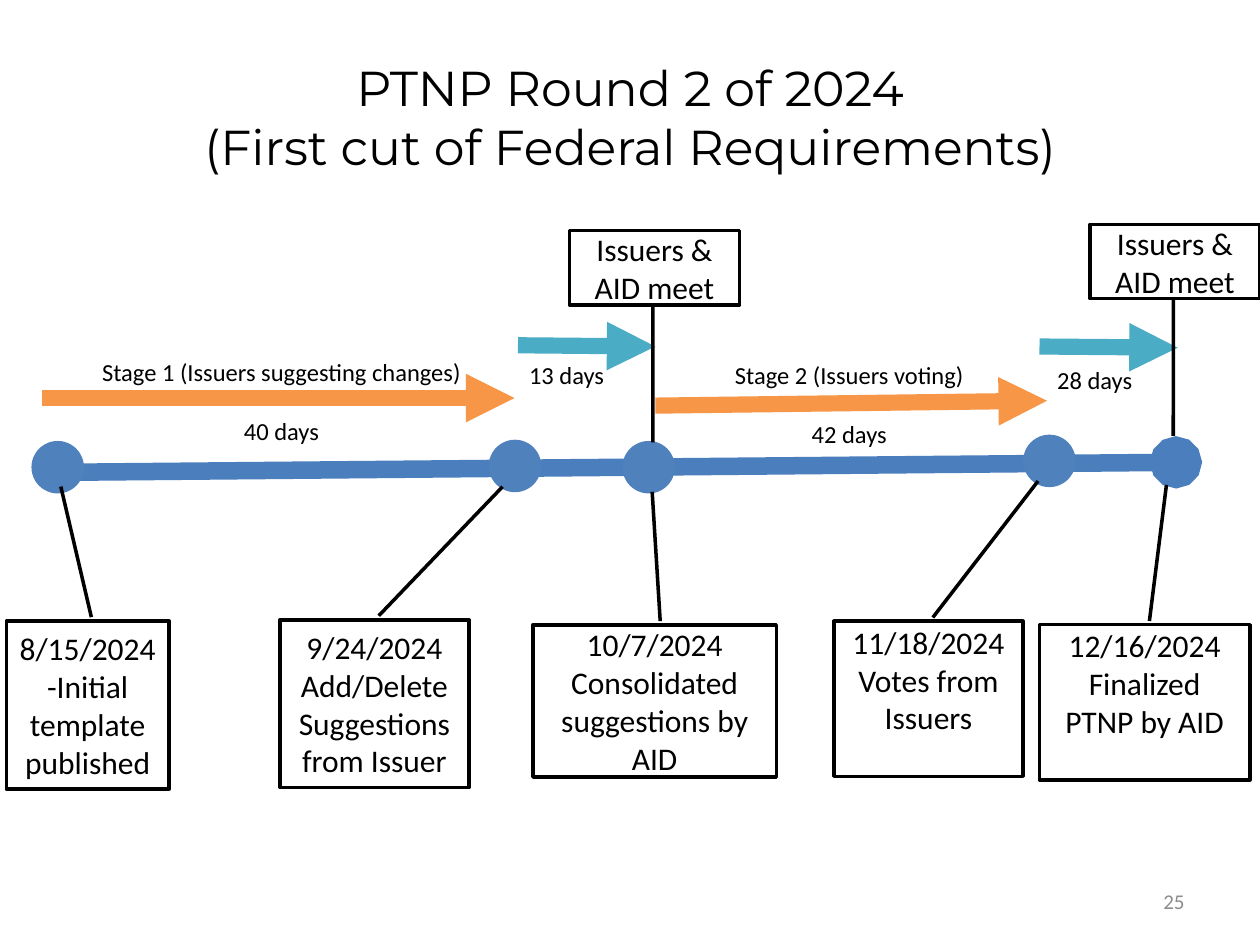
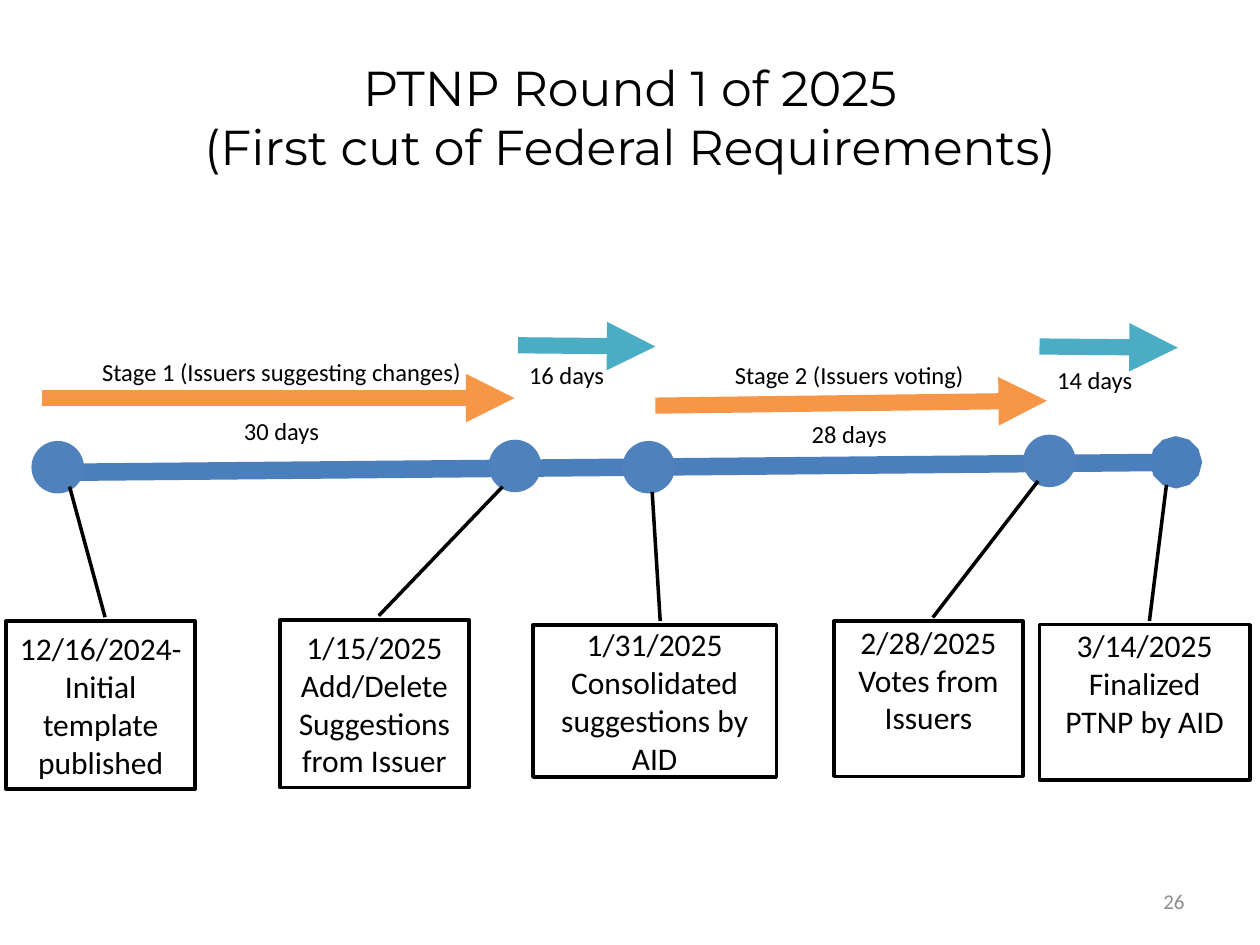
from lxml import etree
from pptx import Presentation
from pptx.dml.color import RGBColor
from pptx.enum import shapes, text
from pptx.oxml import ns
from pptx.util import Pt

BLACK = RGBColor(0x00, 0x00, 0x00)
WHITE = RGBColor(0xFF, 0xFF, 0xFF)
GRAY = RGBColor(0x8C, 0x8C, 0x8C)
AXIS_BLUE = RGBColor(0x4B, 0x7E, 0xBC)
DOT_BLUE = RGBColor(0x4F, 0x81, 0xBD)
ORANGE = RGBColor(0xF7, 0x96, 0x46)
TEAL = RGBColor(0x4B, 0xAC, 0xC6)
LEFT, CENTER, RIGHT = text.PP_ALIGN.LEFT, text.PP_ALIGN.CENTER, text.PP_ALIGN.RIGHT
DOT_SIZE = 30
BLANK_LINE = 22

# start x, start y, end x, end y, colour, width, end shape
LINES = [
    (24, 270, 672, 264.2, AXIS_BLUE, 10, "oval"),
    (24, 227.5, 294, 227.5, ORANGE, 9.25, "triangle"),
    (374.5, 231.8, 598.3, 229, ORANGE, 9.25, "triangle"),
    (296, 197.3, 374.5, 198, TEAL, 9.25, "triangle"),
    (594, 198, 673, 198.7, TEAL, 9.25, "triangle"),
]
DOTS = [(18, 252), (279.3, 251.3), (355.7, 252), (584.7, 248.4)]

# left, top, width, height, pointer end (y, x), event text, space kept below the text
EVENTS = [
    (3.6, 355, 93, 95.8, (-0.803, 0.335), "-Initial template published", 0),
    (160, 354.2, 108, 95.8, (-0.794, 1.178), "\nAdd/Delete Suggestions from Issuer", 0),
    (304.6, 357, 139, 87, (-0.873, 0.49), "\nConsolidated suggestions by AID", 0),
    (476.6, 355, 108, 88.6, (-0.904, 1.08), " Votes from Issuers", BLANK_LINE),
    (594, 357, 120.2, 88.6, (-0.902, 0.604), "\nFinalized PTNP by AID", BLANK_LINE),
]
MEETINGS = [(325.4, 131.8), (622.8, 128.2)]

# left, top, width, height, alignment, stage name
DURATIONS = [
    (44.6, 200.2, 232.6, 58.3, CENTER, "Stage 1 (Issuers suggesting changes)\n"),
    (295.2, 202.3, 73.4, 24.5, LEFT, ""),
    (386, 202.3, 198.7, 58.3, CENTER, "Stage 2 (Issuers voting)\n"),
    (597, 205.2, 73.4, 24.5, LEFT, ""),
]

# name, page number, dates, days, width of first event box, whether meetings show
ROUNDS = [
    ("PTNP Round 2 of 2024", 25,
     ["8/15/2024", "9/24/2024", "10/7/2024", "11/18/2024", "12/16/2024"],
     [40, 13, 42, 28], 93, True),
    ("PTNP Round 1 of 2025", 26,
     ["12/16/2024", "1/15/2025", "1/31/2025", "2/28/2025", "3/14/2025"],
     [30, 16, 28, 14], 108, False),
]


def write(shape, words, size, align=CENTER, color=BLACK, font="Calibri"):
    frame = shape.text_frame
    frame.text = words
    frame.word_wrap = True
    for para in frame.paragraphs:
        para.alignment = align
        for span in para.runs:
            span.font.size = Pt(size)
            span.font.name = font
            span.font.color.rgb = color
    return frame


def add_callout(page, left, top, width, height, pointer, words, space_below=0):
    """Add a bordered box; pointer holds start y, start x, end y, end x as box fractions."""
    box = page.shapes.add_shape(shapes.MSO_SHAPE.LINE_CALLOUT_1,
                                Pt(left), Pt(top), Pt(width), Pt(height))
    for index, value in enumerate(pointer):
        box.adjustments[index] = value
    box.shadow.inherit = False
    box.fill.solid()
    box.fill.fore_color.rgb = WHITE
    box.line.color.rgb = BLACK
    box.line.width = Pt(2)
    frame = write(box, words, 18)
    frame.vertical_anchor = text.MSO_ANCHOR.MIDDLE
    frame.margin_top, frame.margin_bottom = 0, Pt(space_below)


deck = Presentation()
deck.slide_width, deck.slide_height = Pt(720), Pt(540)

for name, number, dates, days, first_width, has_meetings in ROUNDS:
    page = deck.slides.add_slide(deck.slide_layouts.get_by_name("Title Only"))
    title = page.shapes.title
    title.left, title.top, title.width, title.height = Pt(36), Pt(21.6), Pt(648), Pt(90)
    write(title, name + "\v(First cut of Federal Requirements)", 28, font="Montserrat")

    footer = page.shapes.add_textbox(Pt(516), Pt(500.5), Pt(168), Pt(28.75))
    write(footer, str(number), 12, RIGHT, GRAY).vertical_anchor = text.MSO_ANCHOR.MIDDLE

    for x1, y1, x2, y2, color, width, end in LINES:
        arrow = page.shapes.add_connector(shapes.MSO_CONNECTOR.STRAIGHT,
                                          Pt(x1), Pt(y1), Pt(x2), Pt(y2))
        arrow.line.color.rgb = color
        arrow.line.width = Pt(width)
        etree.SubElement(arrow.line._get_or_add_ln(), ns.qn("a:tailEnd"), type=end)
        etree.SubElement(arrow._element.spPr, ns.qn("a:effectLst"))

    for left, top in DOTS:
        dot = page.shapes.add_shape(shapes.MSO_SHAPE.FLOWCHART_CONNECTOR,
                                    Pt(left), Pt(top), Pt(DOT_SIZE), Pt(DOT_SIZE))
        dot.shadow.inherit = False
        dot.fill.solid()
        dot.fill.fore_color.rgb = DOT_BLUE
        dot.line.fill.background()

    for index, (left, top, width, height, tip, event, space_below) in enumerate(EVENTS):
        add_callout(page, left, top, width if index else first_width, height,
                    (-0.024, 0.523, *tip), dates[index] + event, space_below)

    for (left, top, width, height, align, stage), count in zip(DURATIONS, days):
        label = page.shapes.add_textbox(Pt(left), Pt(top), Pt(width), Pt(height))
        frame = write(label, f"{stage}{count} days", 14, align)
        frame.auto_size = text.MSO_AUTO_SIZE.SHAPE_TO_FIT_TEXT
        for para in frame.paragraphs[1:]:
            para.space_before = Pt(17)

    if has_meetings:
        for left, top in MEETINGS:
            add_callout(page, left, top, 97.2, 42.5, (1.014, 0.491, 2.846, 0.49),
                        "Issuers & AID meet")

deck.save("out.pptx")
